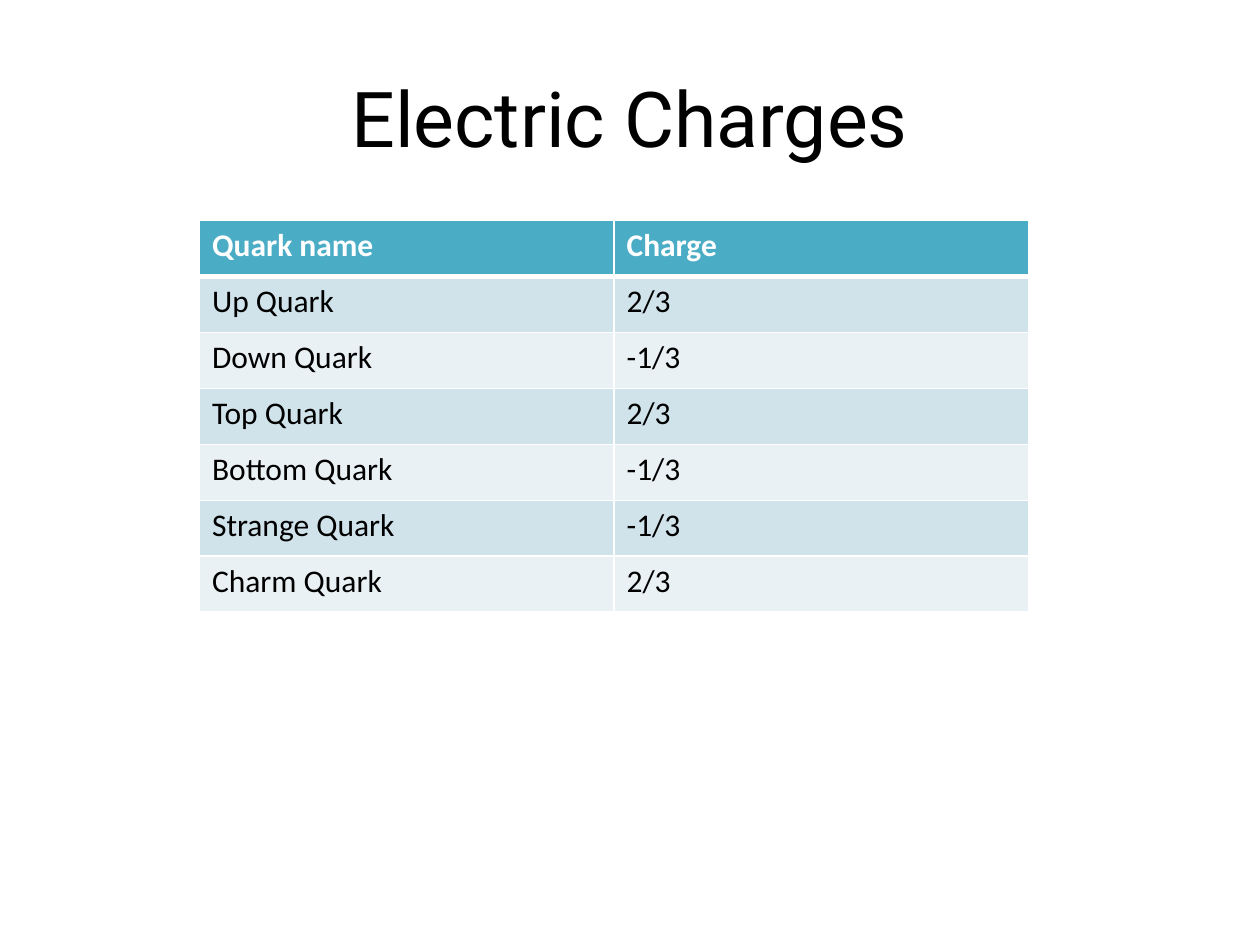
from typing import NamedTuple

from lxml.etree import SubElement
from pptx import Presentation
from pptx.dml.color import RGBColor
from pptx.enum.text import MSO_ANCHOR, PP_ALIGN
from pptx.oxml.ns import qn
from pptx.util import Pt

HEADER_FILL = "4BACC6"
BAND_FILLS = ("D0E3EA", "E9F1F5")
WHITE, BLACK = "FFFFFF", "000000"
ROW_HEIGHT = 32
COLUMN_WIDTH = 236.88
THIN, THICK = 1, 3


class Quark(NamedTuple):
    name: str
    charge: str


QUARKS = [
    Quark("Up Quark", "2/3"),
    Quark("Down Quark", "-1/3"),
    Quark("Top Quark", "2/3"),
    Quark("Bottom Quark", "-1/3"),
    Quark("Strange Quark", "-1/3"),
    Quark("Charm Quark", "2/3"),
]


def color(value: str) -> RGBColor:
    return RGBColor.from_string(value)


def set_font(font, text_color: str, **formats) -> None:
    font.color.rgb = color(text_color)
    for attribute, value in formats.items():
        setattr(font, attribute, value)


def add_borders(cell, top: float, bottom: float) -> None:
    """Draw white cell borders; call before the fill to keep schema order."""
    properties = cell._tc.get_or_add_tcPr()
    for side, width in {"L": THIN, "R": THIN, "T": top, "B": bottom}.items():
        line = SubElement(properties, qn(f"a:ln{side}"), w=str(Pt(width)))
        fill = SubElement(line, qn("a:solidFill"))
        SubElement(fill, qn("a:srgbClr"), val=WHITE)


def fill_cell(cell, text: str, row: int) -> None:
    is_header = row == 0
    add_borders(cell, top=THICK if row == 1 else THIN,
                bottom=THICK if is_header else THIN)
    cell.fill.solid()
    cell.fill.fore_color.rgb = color(HEADER_FILL if is_header else BAND_FILLS[(row - 1) % 2])
    cell.text = text
    set_font(cell.text_frame.paragraphs[0].runs[0].font, WHITE if is_header else BLACK,
             name="Calibri", size=Pt(18), bold=is_header)


def add_title(slide, text: str) -> None:
    title = slide.shapes.title
    placement = {"left": 36, "top": 21.6, "width": 648, "height": 90}
    for attribute, value in placement.items():
        setattr(title, attribute, Pt(value))
    title.text_frame.text = text
    title.text_frame.vertical_anchor = MSO_ANCHOR.MIDDLE
    paragraph = title.text_frame.paragraphs[0]
    paragraph.alignment = PP_ALIGN.CENTER
    set_font(paragraph.runs[0].font, BLACK, name="Roboto", size=Pt(44))


def add_quark_table(slide, records: list[Quark]) -> None:
    row_count, column_count = len(records), len(Quark._fields)
    table = slide.shapes.add_table(
        row_count, column_count, Pt(114), Pt(126),
        Pt(column_count * COLUMN_WIDTH), Pt(row_count * ROW_HEIGHT)).table
    for row, record in enumerate(records):
        for column, text in enumerate(record):
            fill_cell(table.cell(row, column), text, row)


def main() -> None:
    presentation = Presentation()
    presentation.slide_width, presentation.slide_height = Pt(720), Pt(540)
    # Title Only layout
    slide = presentation.slides.add_slide(presentation.slide_layouts[5])
    add_title(slide, "Electric Charges")
    # Header row followed by the quarks
    add_quark_table(slide, [Quark("Quark name", "Charge"), *QUARKS])
    presentation.save("out.pptx")


if __name__ == "__main__":
    main()
